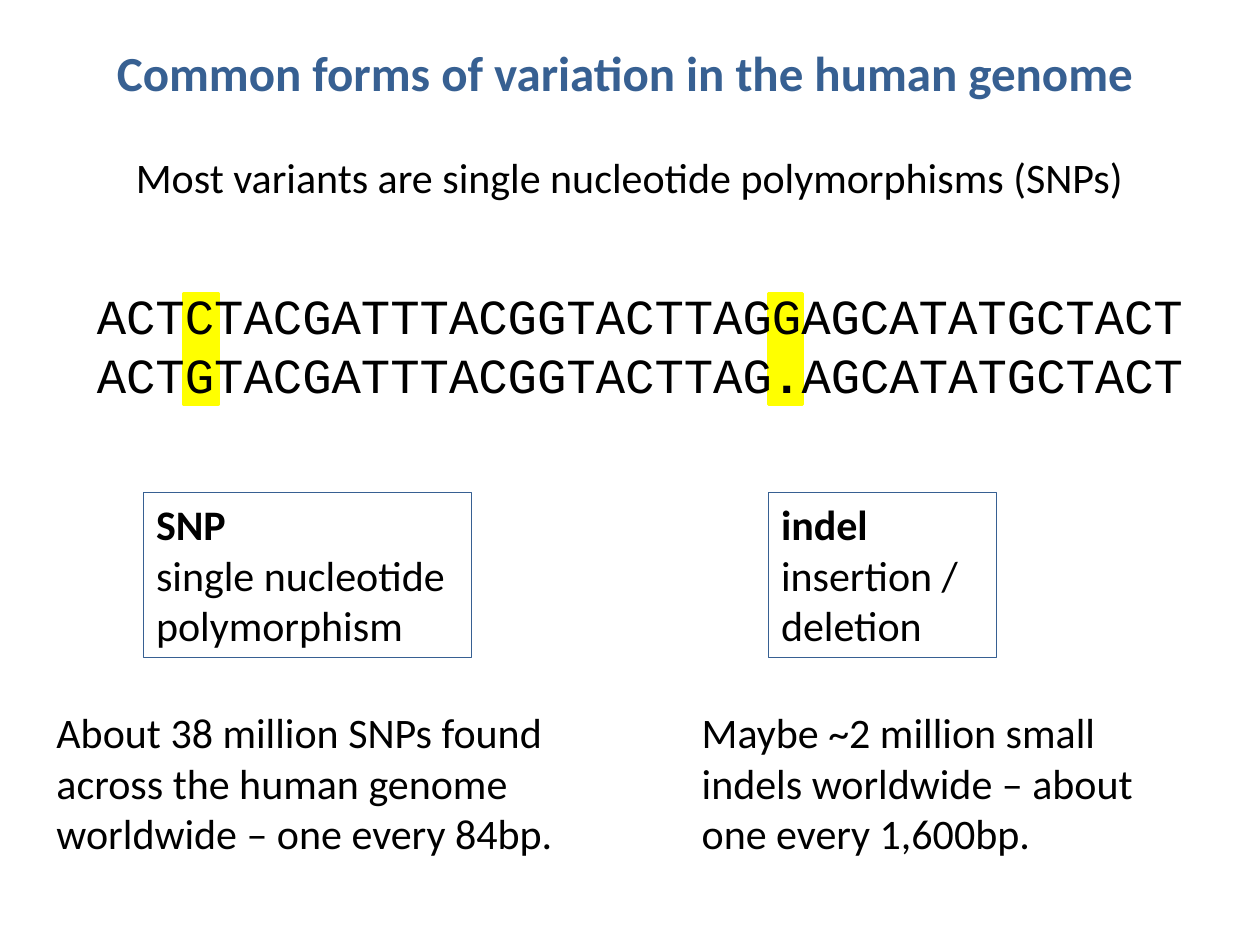
from pptx import Presentation
from pptx import util as u
from pptx.dml.color import RGBColor
from pptx.enum import shapes

BLUE, BLACK, YELLOW = "376092", "000000", "FFFF00"
LEFT_SITE, RIGHT_SITE = 1.46, 6.1
TERM_TOP, NOTE_TOP, ROW_HEIGHT = 3.91, 5.56, 1.31


def colour(code):
    return RGBColor.from_string(code)


def inches(*lengths):
    return [u.Inches(length) for length in lengths]


def add_site(slide, left):
    """Highlight the column where the two sequences differ."""
    site = slide.shapes.add_shape(
        shapes.MSO_SHAPE.RECTANGLE, *inches(left, 2.33, 0.27, 0.88))
    site.shadow.inherit = False
    site.fill.solid()
    site.fill.fore_color.rgb = colour(YELLOW)
    site.line.color.rgb = colour(YELLOW)
    site.line.width = u.Pt(2)


def add_text(slide, box, lines, size=24, font="Calibri", ink=BLACK, bold_lines=0):
    """Write one paragraph per line, the first bold_lines of them bold."""
    area = slide.shapes.add_textbox(*inches(*box))
    frame = area.text_frame
    frame.word_wrap = True
    frame.text = "\n".join(lines)
    for index, paragraph in enumerate(frame.paragraphs):
        paragraph.font.size = u.Pt(size)
        paragraph.font.name = font
        paragraph.font.color.rgb = colour(ink)
        paragraph.font.bold = index < bold_lines
    return area


def add_term(slide, left, width, lines):
    term = add_text(slide, (left, TERM_TOP, width, ROW_HEIGHT), lines, bold_lines=1)
    term.line.color.rgb = colour(BLUE)
    term.line.width = u.Pt(0.75)


def add_sequences(slide):
    start, end = "TACGATTTACGGTACTTAG", "AGCATATGCTACT"
    frame = add_text(slide, (0.67, 1.78, 8.98, 2.26),
                     [f"ACTC{start}G{end}", f"ACTG{start}"],
                     size=28, font="Courier New").text_frame
    frame.margin_top = u.Inches(0.48)
    for paragraph in frame.paragraphs:
        paragraph.line_spacing = u.Pt(34)
    deletion = frame.paragraphs[1].add_run()
    deletion.text = "."
    deletion.font.bold = True
    frame.paragraphs[1].add_run().text = end


def main():
    deck = Presentation()
    deck.slide_width, deck.slide_height = inches(10, 7.5)
    slide = deck.slides.add_slide(deck.slide_layouts[6])

    for left in (LEFT_SITE, RIGHT_SITE):
        add_site(slide, left)
    add_sequences(slide)
    add_text(slide, (0.83, 0.29, 8.43, 0.57),
             ["Common forms of variation in the human genome"],
             size=28, ink=BLUE, bold_lines=1)
    add_term(slide, 1.14, 2.6, ["SNP", "single nucleotide", "polymorphism"])
    add_term(slide, RIGHT_SITE, 1.81, ["indel", "insertion /", "deletion"])
    add_text(slide, (0.35, NOTE_TOP, 4.8, ROW_HEIGHT),
             ["About 38 million SNPs found across the human genome "
              "worldwide – one every 84bp."])
    add_text(slide, (5.47, NOTE_TOP, 3.78, ROW_HEIGHT),
             ["Maybe ~2 million small indels worldwide – about "
              "one every 1,600bp."])
    subtitle = add_text(slide, (0.98, 1.15, 8.14, 0.5),
                        ["Most variants are single nucleotide polymorphisms (SNPs)"])
    subtitle.text_frame.word_wrap = False
    deck.save("out.pptx")


if __name__ == "__main__":
    main()
